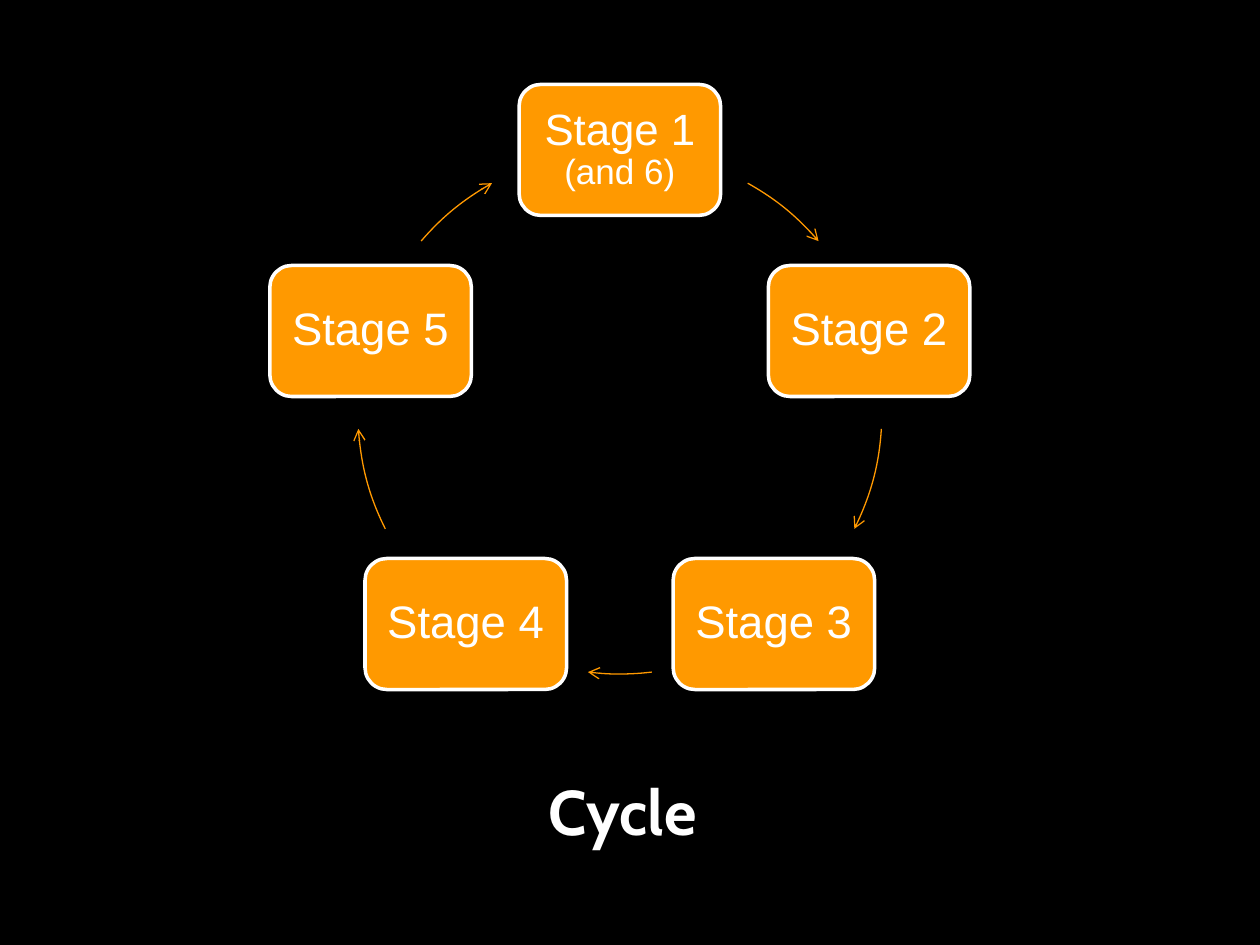
from dataclasses import dataclass
from math import cos, radians, sin

from lxml.etree import SubElement
from pptx import Presentation
from pptx.dml.color import RGBColor
from pptx.enum.shapes import MSO_SHAPE
from pptx.enum.text import MSO_ANCHOR, MSO_AUTO_SIZE, PP_ALIGN
from pptx.oxml.ns import qn
from pptx.util import Inches, Pt

BLACK, WHITE, ORANGE = "000000", "FFFFFF", "FF9900"
CENTER_X, CENTER_Y, RADIUS = 4.92, 3.27, 2.08
BOX_WIDTH, BOX_HEIGHT = 1.6, 1.04


@dataclass
class Span:
    text: str
    size: float = 26


@dataclass
class Stage:
    """A box on the circle and the arc that leaves it; angles run clockwise from the top."""
    spans: list[Span]
    arc_start: float
    arc_end: float
    inset: float = 0.11


STAGES = [
    Stage([Span("Stage 1 ", 25), Span("(and 6)", 20)], 29.2, 49.3, inset=0.1),
    Stage([Span("Stage 2")], 93.7, 116.5),
    Stage([Span("Stage 3")], 173, 187),
    Stage([Span("Stage 4")], 243.5, 266.3),
    Stage([Span("Stage 5")], 310.7, 330.8),
]


def color(value: str) -> RGBColor:
    return RGBColor.from_string(value)


def add_span(para, text: str, *, size: float, font: str = "Arial", bold: bool = False) -> None:
    span = para.add_run()
    span.text = text
    span.font.size = Pt(size)
    span.font.name = font
    span.font.bold = bold
    span.font.color.rgb = color(WHITE)


def set_line(shape, value: str, width: float) -> None:
    shape.shadow.inherit = False
    shape.line.color.rgb = color(value)
    shape.line.width = Pt(width)


def add_stage_box(page, stage: Stage, angle: float) -> None:
    left = CENTER_X + RADIUS * sin(radians(angle)) - BOX_WIDTH / 2
    top = CENTER_Y - RADIUS * cos(radians(angle)) - BOX_HEIGHT / 2
    box = page.shapes.add_shape(MSO_SHAPE.ROUNDED_RECTANGLE, Inches(left), Inches(top),
                                Inches(BOX_WIDTH), Inches(BOX_HEIGHT))
    box.fill.solid()
    box.fill.fore_color.rgb = color(ORANGE)
    set_line(box, WHITE, 2)
    frame = box.text_frame
    frame.word_wrap = True
    frame.vertical_anchor = MSO_ANCHOR.MIDDLE
    frame.margin_left = frame.margin_right = Inches(stage.inset)
    frame.margin_top = frame.margin_bottom = Inches(stage.inset)
    para = frame.paragraphs[0]
    para.alignment = PP_ALIGN.CENTER
    para.line_spacing = 0.9
    for span in stage.spans:
        add_span(para, span.text, size=span.size)


def add_arc_arrow(page, stage: Stage) -> None:
    arc = page.shapes.add_shape(MSO_SHAPE.ARC, Inches(CENTER_X - RADIUS),
                                Inches(CENTER_Y - RADIUS),
                                Inches(2 * RADIUS), Inches(2 * RADIUS))
    # Arc angles start at the right and count 60000 units a degree; adjustments divide by 100000.
    for index, angle in enumerate((stage.arc_start, stage.arc_end)):
        arc.adjustments[index] = (angle - 90) % 360 * 0.6
    arc.fill.background()
    set_line(arc, ORANGE, 0.75)
    SubElement(arc.line._get_or_add_ln(), qn("a:tailEnd"), type="arrow")


def add_title(page, text: str) -> None:
    title = page.shapes.title
    title.left, title.top = Inches(4.25), Inches(6.08)
    title.width, title.height = Inches(1.58), Inches(0.71)
    frame = title.text_frame
    frame.word_wrap = True
    frame.auto_size = MSO_AUTO_SIZE.SHAPE_TO_FIT_TEXT
    frame.vertical_anchor = MSO_ANCHOR.TOP
    para = frame.paragraphs[0]
    para.alignment = PP_ALIGN.LEFT
    add_span(para, text, size=36, font="Cabin", bold=True)


def main() -> None:
    deck = Presentation()
    deck.slide_width, deck.slide_height = Inches(10), Inches(7.5)
    page = deck.slides.add_slide(deck.slide_layouts[5])
    page.background.fill.solid()
    page.background.fill.fore_color.rgb = color(BLACK)
    add_title(page, "Cycle")
    for index, stage in enumerate(STAGES):
        add_stage_box(page, stage, index * 360 / len(STAGES))
        add_arc_arrow(page, stage)
    deck.save("out.pptx")


if __name__ == "__main__":
    main()
